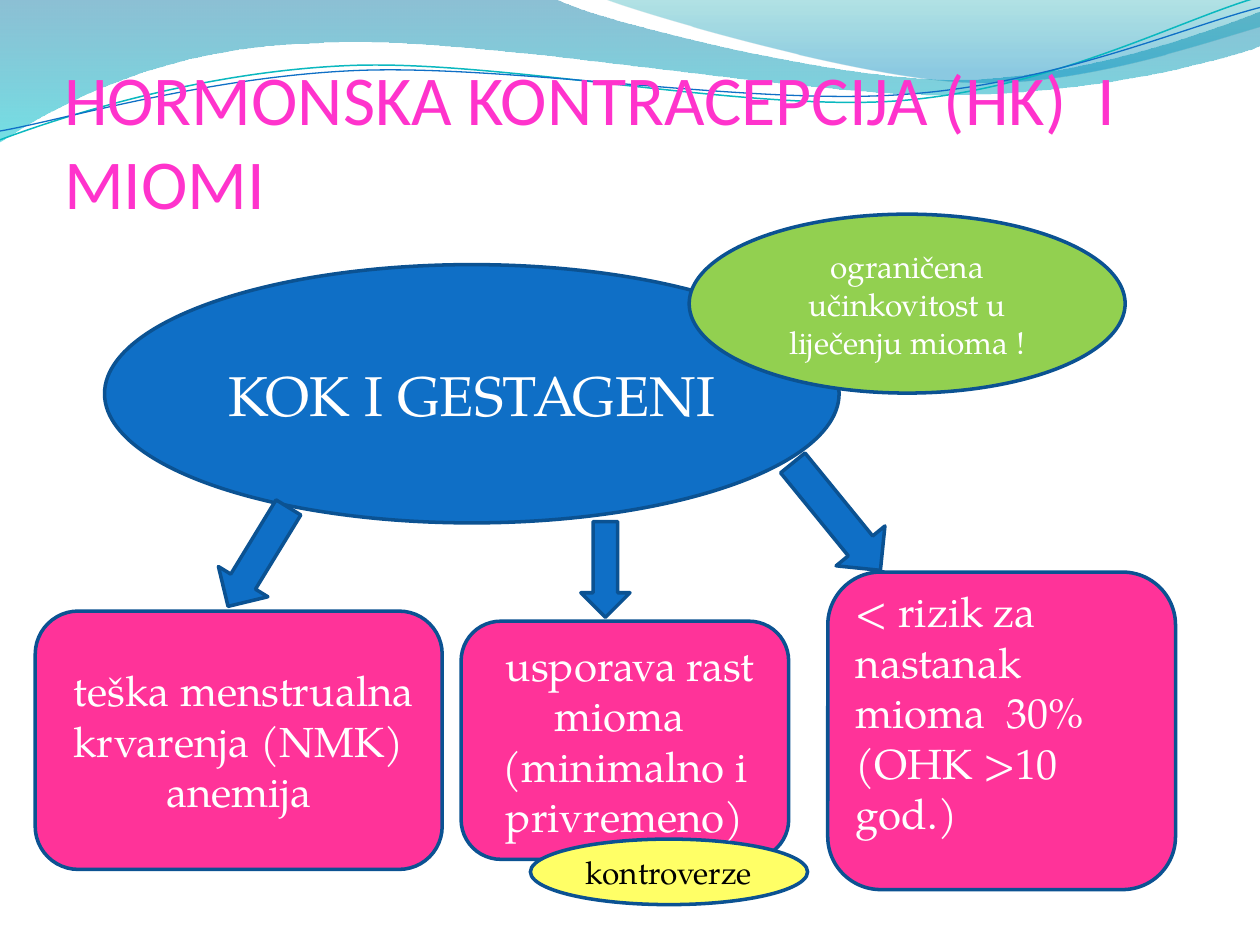
"""Build the slide on hormonal contraception and fibroids."""
from math import cos, radians, sin

from pptx import Presentation
from pptx.dml.color import RGBColor
from pptx.enum.shapes import MSO_SHAPE as Shape
from pptx.enum.text import MSO_ANCHOR as Anchor, PP_ALIGN as Align
from pptx.oxml.xmlchemy import OxmlElement
from pptx.util import Inches, Pt

BLUE = RGBColor(0x0F, 0x6F, 0xC6)
NAVY = RGBColor(0x0B, 0x52, 0x92)
PINK = RGBColor(0xFF, 0x33, 0x99)
MAGENTA = RGBColor(0xFF, 0x33, 0xCC)
GREEN = RGBColor(0x92, 0xD0, 0x50)
YELLOW = RGBColor(0xFF, 0xFF, 0x66)
WHITE = RGBColor(0xFF, 0xFF, 0xFF)
BLACK = RGBColor(0x00, 0x00, 0x00)
TEAL = RGBColor(0x0A, 0xB8, 0xBF)
WAVE_BLUE = RGBColor(0x00, 0x74, 0xA1)
WAVE_CYAN = RGBColor(0x00, 0xC6, 0xCF)
CREST_TEAL = RGBColor(0x00, 0xA1, 0xA9)
CREST_BLUE = RGBColor(0x00, 0x8B, 0xBF)
SERIF = "TeX Gyre Pagella"
TILT = 2.7

deck = Presentation()
deck.slide_width, deck.slide_height = Inches(10), Inches(7.5)
page = deck.slides.add_slide(deck.slide_layouts[6])


def add_outline(start, segments, close):
    """Draw segments of one point (line) or three points (cubic curve)."""
    corners = [(Inches(x), Inches(y)) for segment in segments for x, y in segment]
    builder = page.shapes.build_freeform(Inches(start[0]), Inches(start[1]))
    builder.add_line_segments(corners, close=close)
    outline = builder.convert_to_shape()
    outline.shadow.inherit = False
    lines = iter(outline.element.findall(".//{*}lnTo"))
    for segment in segments:
        first = next(lines)
        if len(segment) == 3:
            curve = OxmlElement("a:cubicBezTo")
            first.addprevious(curve)
            for line in (first, next(lines), next(lines)):
                curve.append(line[0])
                line.getparent().remove(line)
    return outline


def write_text(box, paragraphs, font_name, size, color, align):
    """Fill a box with one run per paragraph."""
    frame = box.text_frame
    frame.word_wrap = True
    for index, text in enumerate(paragraphs):
        para = frame.paragraphs[0] if index == 0 else frame.add_paragraph()
        para.alignment = align
        span = para.add_run()
        span.text = text
        span.font.name, span.font.size = font_name, Pt(size)
        span.font.color.rgb = color


waves = [
    ((0, 0), [[(4.4, -0.01)],
              [(4.76, 0.17), (6.64, 0.63), (7.58, 0.63)],
              [(8.53, 0.63), (9.58, 0.26), (10, 0.09)],
              [(10.01, 0.36)],
              [(9.83, 0.44), (8.7, 0.76), (7.46, 0.75)],
              [(6.22, 0.75), (3.82, 0.28), (2.57, 0.34)],
              [(1.29, 0.36), (0.46, 0.83), (-0.01, 1.13)],
              [(0, 0)]],
     [(0, WAVE_BLUE, 45), (1, WAVE_CYAN, 55)]),
    ((4.79, -0.01), [[(5.09, 0.11), (6.82, 0.62), (7.69, 0.65)],
                     [(8.56, 0.69), (9.61, 0.32), (10, 0.21)],
                     [(10, 0)],
                     [(4.79, -0.01)]],
     [(0, CREST_TEAL, 30), (0.8, CREST_BLUE, 45)]),
]
for start, segments, stops in waves:
    wave = add_outline(start, segments, True)
    wave.line.fill.background()
    wave.fill.gradient()
    wave.fill.gradient_angle = 270
    for stop, (position, color, opacity) in zip(wave.fill.gradient_stops, stops):
        stop.position = position
        stop.color.rgb = color
    tints = wave.element.findall(".//{*}gs/{*}srgbClr")
    for tint, (position, color, opacity) in zip(tints, stops):
        alpha = OxmlElement("a:alpha")
        alpha.set("val", str(opacity * 1000))
        tint.append(alpha)

strands = [
    ((4.99, 0.58), (0, 1.11),
     [[(0.48, 0.93), (1.58, 0.57), (2.77, 0.52)],
      [(3.95, 0.47), (5.93, 0.89), (7.13, 0.8)],
      [(8.33, 0.71), (9.38, 0.15), (9.98, -0.02)]], TEAL, 0.85),
    ((5, 0.59), (0, 1.04),
     [[(0.47, 0.96), (1.64, 0.61), (2.83, 0.56)],
      [(4.03, 0.51), (5.97, 0.84), (7.17, 0.75)],
      [(8.36, 0.67), (9.41, 0.21), (10, 0.06)]], BLUE, 0.75),
]
cosine, sine = cos(radians(TILT)), sin(radians(TILT))
for (cx, cy), start, segments, color, width in strands:
    level = [[(cx + (x - cx) * cosine - (y - cy) * sine,
               cy + (x - cx) * sine + (y - cy) * cosine) for x, y in segment]
             for segment in [[start], *segments]]
    strand = add_outline(level[0][0], level[1:], False)
    strand.rotation = 360 - TILT
    strand.fill.background()
    strand.line.color.rgb, strand.line.width = color, Pt(width)

title = page.shapes.add_textbox(Inches(0.51), Inches(0.52), Inches(9), Inches(1.25))
title.text_frame.margin_left = title.text_frame.margin_right = 0
title.text_frame.margin_bottom = 0
title.text_frame.vertical_anchor = Anchor.BOTTOM
write_text(title, ["HORMONSKA KONTRACEPCIJA (HK)  I MIOMI"], "Calibri", 40, MAGENTA, Align.LEFT)

OVAL, CARD, ARROW = Shape.OVAL, Shape.ROUNDED_RECTANGLE, Shape.DOWN_ARROW
nodes = [
    (OVAL, 0.83, 2.1, 5.83, 2.05, 0, BLUE, ["KOK I GESTAGENI "], 32, WHITE, Align.CENTER, 0.05),
    (CARD, 6.57, 4.54, 2.76, 2.52, 0, PINK,
     ["< rizik za nastanak mioma  30%", "(OHK >10 god.)"], 24, WHITE, Align.LEFT, 0.35),
    (CARD, 3.66, 4.93, 2.6, 1.89, 0, PINK,
     [" usporava rast mioma ", "(minimalno i privremeno)"], 24, WHITE, Align.CENTER, 0.05),
    (CARD, 0.28, 4.85, 3.23, 2.05, 0, PINK,
     [" teška menstrualna krvarenja (NMK)", "anemija"], 24, WHITE, Align.CENTER, 0.05),
    (OVAL, 5.47, 1.7, 3.46, 1.42, 0, GREEN,
     ["ograničena učinkovitost u liječenju mioma !"], 18, WHITE, Align.CENTER, 0.05),
    (ARROW, 1.82, 3.96, 0.46, 0.92, 31.4, BLUE, [], 18, WHITE, Align.CENTER, 0.05),
    (ARROW, 4.61, 4.14, 0.39, 0.76, 0, BLUE, [], 18, WHITE, Align.CENTER, 0.05),
    (ARROW, 6.39, 3.55, 0.5, 1.1, 320.8, BLUE, [], 18, WHITE, Align.CENTER, 0.05),
    (OVAL, 4.21, 6.66, 2.2, 0.52, 0, YELLOW, ["kontroverze"], 18, BLACK, Align.CENTER, 0.05),
]
for kind, left, top, width, height, angle, fill, texts, size, ink, align, bottom in nodes:
    node = page.shapes.add_shape(kind, Inches(left), Inches(top), Inches(width), Inches(height))
    node.rotation = angle
    node.shadow.inherit = False
    node.fill.solid()
    node.fill.fore_color.rgb = fill
    node.line.color.rgb, node.line.width = NAVY, Pt(2)
    node.text_frame.vertical_anchor = Anchor.MIDDLE
    node.text_frame.margin_bottom = Inches(bottom)
    write_text(node, texts, SERIF, size, ink, align)

deck.save("out.pptx")
